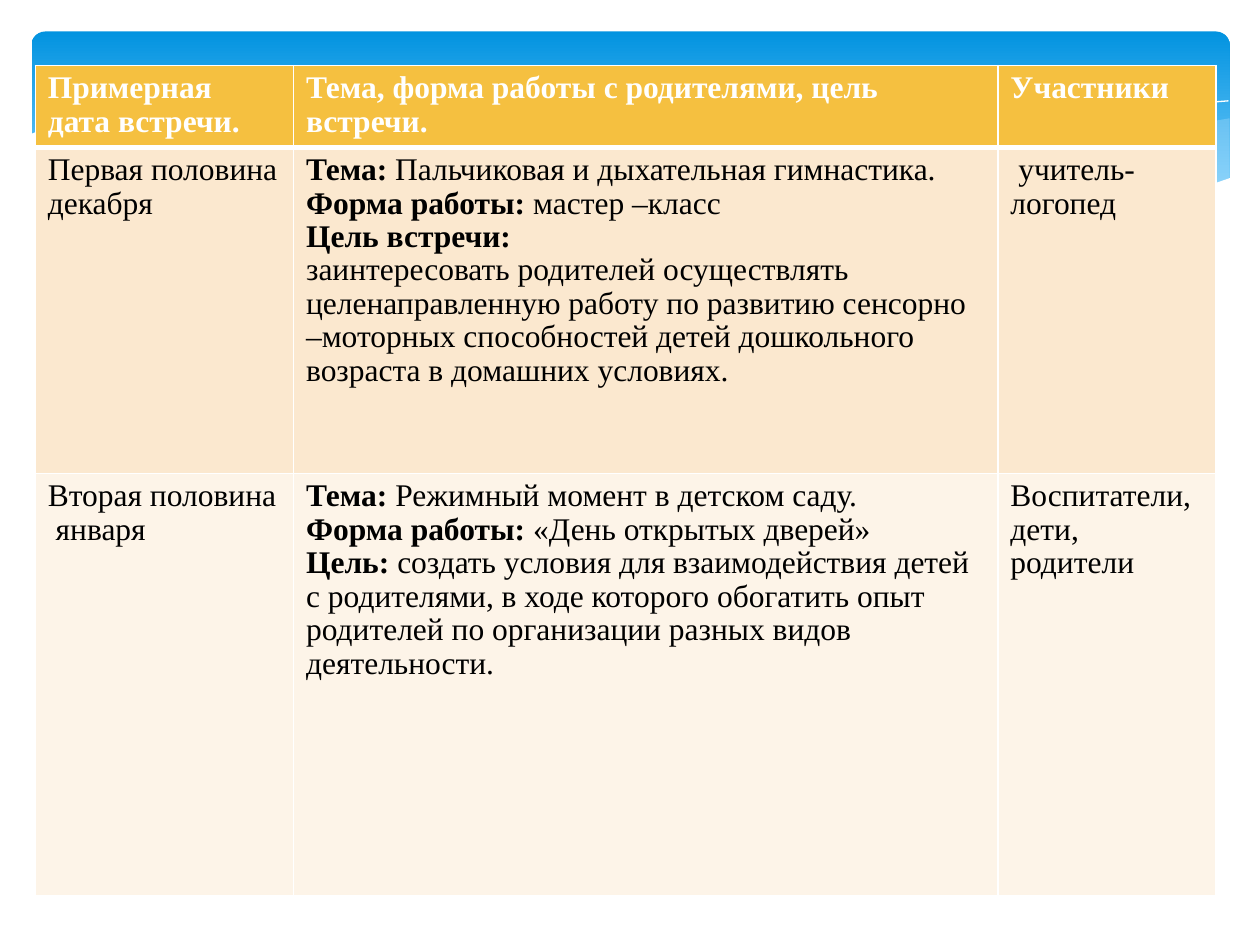
from lxml import etree
from pptx import Presentation
from pptx import util as u
from pptx.dml.color import RGBColor
from pptx.enum import shapes
from pptx.oxml.ns import qn

WHITE = RGBColor(0xFF, 0xFF, 0xFF)
BLACK = RGBColor(0, 0, 0)
SKY_DARK = RGBColor(0x02, 0x93, 0xE0)
SKY_LIGHT = RGBColor(0x83, 0xD3, 0xFE)
MIST = RGBColor(0xC6, 0xE7, 0xFC)
AMBER = RGBColor(0xF5, 0xC0, 0x40)
PEACH = RGBColor(0xFB, 0xE8, 0xCF)
CREAM = RGBColor(0xFD, 0xF4, 0xE8)

# Cells are lists of paragraphs; *...* is bold, ~ a no-break space, | a line break.
ROWS = [
    [["*Примерная дата встречи.*"],
     ["*Тема, форма работы с родителями, цель встречи.*"],
     ["*Участники*"]],
    [["Первая половина декабря"],
     ["*Тема:* Пальчиковая и дыхательная гимнастика.|"
      "*Форма работы:* мастер –класс|"
      "*Цель встречи: *заинтересовать~родителей~осуществлять "
      "целенаправленную работу по~развитию сенсорно –моторных способностей "
      "детей дошкольного возраста в домашних условиях."],
     [" учитель-логопед"]],
    [["Вторая половина ~января"],
     ["*Тема: *Режимный момент в детском саду.",
      "*Форма работы: *«День открытых дверей»",
      "*Цель:* создать условия для взаимодействия детей с родителями, в ходе "
      "которого обогатить опыт родителей по организации разных видов деятельности."],
     ["Воспитатели, дети, родители"]],
]
ROW_STYLES = [(0.65, AMBER, WHITE, 3), (2.59, PEACH, BLACK, 1), (3.35, CREAM, BLACK, 1)]
COLUMN_WIDTHS = [2.05, 5.59, 1.73]
TABLE_LEFT, TABLE_TOP = 0.28, 0.52

# Wave outlines in hundredths of an inch, with fill and opacity in percent.
WAVES = [
    ([(975, 94), (935, 101), (891, 110), (832, 125), (779, 137), (729, 147), (661, 160),
      (705, 165), (757, 170), (814, 172), (863, 170), (905, 163), (942, 154), (976, 141),
      (976, 94)], MIST, 29),
    ([(893, 167), (837, 159), (775, 149), (706, 134), (629, 116), (569, 102), (514, 92),
      (465, 86), (420, 82), (361, 80), (313, 82), (286, 86), (342, 94), (404, 106),
      (491, 126), (566, 143), (634, 156), (695, 165), (748, 170), (807, 173), (848, 172),
      (893, 167)], MIST, 40),
    ([(309, 90), (344, 84), (387, 82), (433, 82), (489, 84), (556, 91), (636, 103),
      (727, 120), (831, 145), (907, 166)], None, None),
    ([(613, 151), (672, 135), (748, 117), (806, 104), (866, 93), (910, 86), (951, 82),
      (975, 80)], None, None),
    ([(977, 141), (940, 154), (899, 164), (850, 170), (793, 171), (726, 167), (648, 156),
      (579, 144), (503, 128), (418, 107), (365, 96), (316, 88), (271, 82), (230, 79),
      (193, 78), (146, 79), (106, 83), (76, 89), (52, 96), (36, 102), (23, 107),
      (23, 224), (977, 224), (977, 141)], WHITE, 100),
]


def add_sky(slide):
    sky = slide.shapes.add_shape(
        shapes.MSO_SHAPE.ROUNDED_RECTANGLE, *map(u.Inches, (0.25, 0.25, 9.51, 1.56)))
    sky.adjustments[0] = 0.07
    sky.shadow.inherit = False
    sky.line.fill.background()
    sky.fill.gradient()
    sky.fill.gradient_angle = 270
    for stop, color, position in zip(sky.fill.gradient_stops, (SKY_DARK, SKY_LIGHT), (0, 0.9)):
        stop.color.rgb, stop.position = color, position


def add_wave(slide, points, color, opacity):
    builder = slide.shapes.build_freeform(*points[0], scale=u.Inches(0.01))
    builder.add_line_segments(points[1:], close=color is not None)
    wave = builder.convert_to_shape()
    wave.shadow.inherit = False
    if color is None:
        wave.fill.background()
        wave.line.color.rgb = WHITE
        wave.line.width = 0
        return
    wave.line.fill.background()
    wave.fill.solid()
    wave.fill.fore_color.rgb = color
    tint = wave.fill._xPr.find(qn("a:solidFill"))[0]
    etree.SubElement(tint, qn("a:alpha"), val=str(opacity * 1000))


def set_borders(cell, bottom_width):
    """Draw white borders; they must come before the fill in the cell's XML."""
    properties = cell._tc.get_or_add_tcPr()
    for index, (side, width) in enumerate(
            (("L", 1), ("R", 1), ("T", 1), ("B", bottom_width))):
        border = etree.Element(qn("a:ln" + side), w=str(u.Pt(width)))
        fill = etree.SubElement(border, qn("a:solidFill"))
        etree.SubElement(fill, qn("a:srgbClr"), val=str(WHITE))
        properties.insert(index, border)


def write_paragraph(paragraph, marked, color):
    paragraph.line_spacing = 0.96
    for index, part in enumerate(marked.replace("~", chr(160)).split("*")):
        for line_number, line in enumerate(part.split("|")):
            if line_number:
                paragraph.add_line_break()
            if line:
                run = paragraph.add_run()
                run.text = line
                run.font.color.rgb = color
                font = {"name": "Times New Roman", "size": u.Pt(18), "bold": index % 2 == 1}
                for key, value in font.items():
                    setattr(run.font, key, value)


def add_schedule(slide):
    frame = slide.shapes.add_table(
        len(ROWS), len(COLUMN_WIDTHS), u.Inches(TABLE_LEFT), u.Inches(TABLE_TOP),
        u.Inches(sum(COLUMN_WIDTHS)), u.Inches(sum(style[0] for style in ROW_STYLES)))
    schedule = frame.table
    for column, width in zip(schedule.columns, COLUMN_WIDTHS):
        column.width = u.Inches(width)
    for row, contents, (height, fill, color, bottom) in zip(schedule.rows, ROWS, ROW_STYLES):
        row.height = u.Inches(height)
        for cell, paragraphs in zip(row.cells, contents):
            cell.fill.solid()
            cell.fill.fore_color.rgb = fill
            set_borders(cell, bottom)
            for index, marked in enumerate(paragraphs):
                body = cell.text_frame
                paragraph = body.add_paragraph() if index else body.paragraphs[0]
                write_paragraph(paragraph, marked, color)


def main():
    deck = Presentation()
    deck.slide_width, deck.slide_height = u.Inches(10), u.Inches(7.5)
    slide = deck.slides.add_slide(deck.slide_layouts[6])
    add_sky(slide)
    for wave in WAVES:
        add_wave(slide, *wave)
    add_schedule(slide)
    deck.save("out.pptx")


if __name__ == "__main__":
    main()
